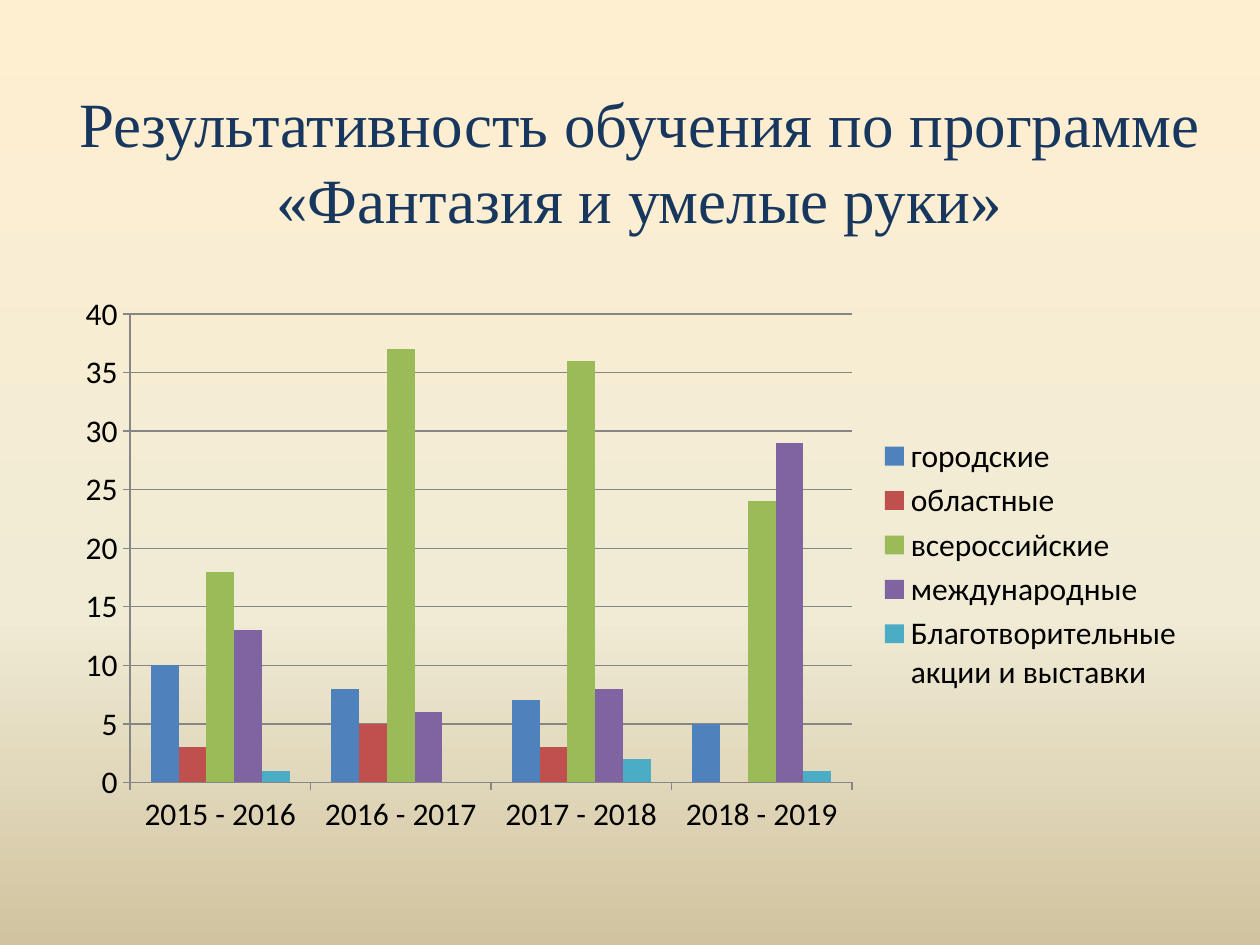
from copy import deepcopy

from pptx import Presentation
from pptx.chart.data import CategoryChartData
from pptx.dml.color import RGBColor
from pptx.enum.chart import XL_CHART_TYPE, XL_LEGEND_POSITION, XL_TICK_MARK
from pptx.enum.text import MSO_ANCHOR, PP_ALIGN
from pptx.util import Cm, Pt

COLUMNS = XL_CHART_TYPE.COLUMN_CLUSTERED
LEGEND_RIGHT = XL_LEGEND_POSITION.RIGHT
TICK_OUTSIDE = XL_TICK_MARK.OUTSIDE
MIDDLE = MSO_ANCHOR.MIDDLE
CENTER = PP_ALIGN.CENTER

NAVY = RGBColor(0x17, 0x37, 0x5E)
BLACK = RGBColor(0x00, 0x00, 0x00)
GRAY = RGBColor(0x86, 0x86, 0x86)
BLUE = RGBColor(0x4F, 0x81, 0xBD)
RED = RGBColor(0xC0, 0x50, 0x4D)
GREEN = RGBColor(0x9B, 0xBB, 0x59)
PURPLE = RGBColor(0x80, 0x64, 0xA2)
TEAL = RGBColor(0x4B, 0xAC, 0xC6)
BACKGROUND_STOPS = [
    (0, RGBColor(0xFF, 0xEF, 0xD1)),
    (0.65, RGBColor(0xF0, 0xEB, 0xD5)),
    (1, RGBColor(0xD1, 0xC3, 0x9F)),
]

TITLE = "Результативность обучения по программе «Фантазия и умелые руки»"
YEARS = ["2015 - 2016", "2016 - 2017", "2017 - 2018", "2018 - 2019"]
RESULTS = [
    ("городские", [10, 8, 7, 5], BLUE),
    ("областные", [3, 5, 3, 0], RED),
    ("всероссийские", [18, 37, 36, 24], GREEN),
    ("международные", [13, 6, 8, 29], PURPLE),
    ("Благотворительные акции и выставки", [1, 0, 2, 1], TEAL),
]
TITLE_BOX = (Cm(1.27), Cm(0.76), Cm(23.24), Cm(4.95))
CHART_BOX = (Cm(1.27), Cm(5.72), Cm(22.86), Cm(11.3))


def paint_background(page):
    """Fill the page with a three-stop gradient running downwards."""
    fill = page.background.fill
    fill.gradient()
    fill.gradient_angle = 270
    first_stop = page.background._cSld.find(".//{*}gs")
    first_stop.addnext(deepcopy(first_stop))
    for stop, (position, color) in zip(fill.gradient_stops, BACKGROUND_STOPS):
        stop.position = position
        stop.color.rgb = color


def add_text(page, box, text, font, size, color, align=CENTER, anchor=MIDDLE):
    """Place one formatted paragraph in a wrapping text box."""
    frame = page.shapes.add_textbox(*box).text_frame
    frame.word_wrap = True
    frame.vertical_anchor = anchor
    para = frame.paragraphs[0]
    para.alignment = align
    span = para.add_run()
    span.text = text
    span.font.name = font
    span.font.size = Pt(size)
    span.font.color.rgb = color


def add_results_chart(page, box):
    """Place the clustered columns of results by school year."""
    data = CategoryChartData()
    data.categories = YEARS
    for name, values, _ in RESULTS:
        data.add_series(name, values)
    chart = page.shapes.add_chart(COLUMNS, *box, data).chart
    chart.has_title = False
    chart.font.name = "Calibri"
    chart.font.size = Pt(18)
    chart.font.color.rgb = BLACK
    chart.has_legend = True
    chart.legend.position = LEGEND_RIGHT
    chart.legend.include_in_layout = False

    plot = chart.plots[0]
    plot.gap_width = 150
    plot.vary_by_categories = False
    for series, (_, _, color) in zip(plot.series, RESULTS):
        series.format.fill.solid()
        series.format.fill.fore_color.rgb = color

    for axis in (chart.category_axis, chart.value_axis):
        axis.major_tick_mark = TICK_OUTSIDE
        axis.format.line.color.rgb = GRAY
    chart.value_axis.has_major_gridlines = True
    chart.value_axis.major_gridlines.format.line.color.rgb = GRAY


def main():
    """Build the deck with its single page."""
    deck = Presentation()
    deck.slide_width, deck.slide_height = Cm(25.4), Cm(19.05)
    page = deck.slides.add_slide(deck.slide_layouts[6])
    paint_background(page)
    add_text(page, TITLE_BOX, TITLE, font="Times New Roman", size=36, color=NAVY)
    add_results_chart(page, CHART_BOX)
    deck.save("out.pptx")


if __name__ == "__main__":
    main()
